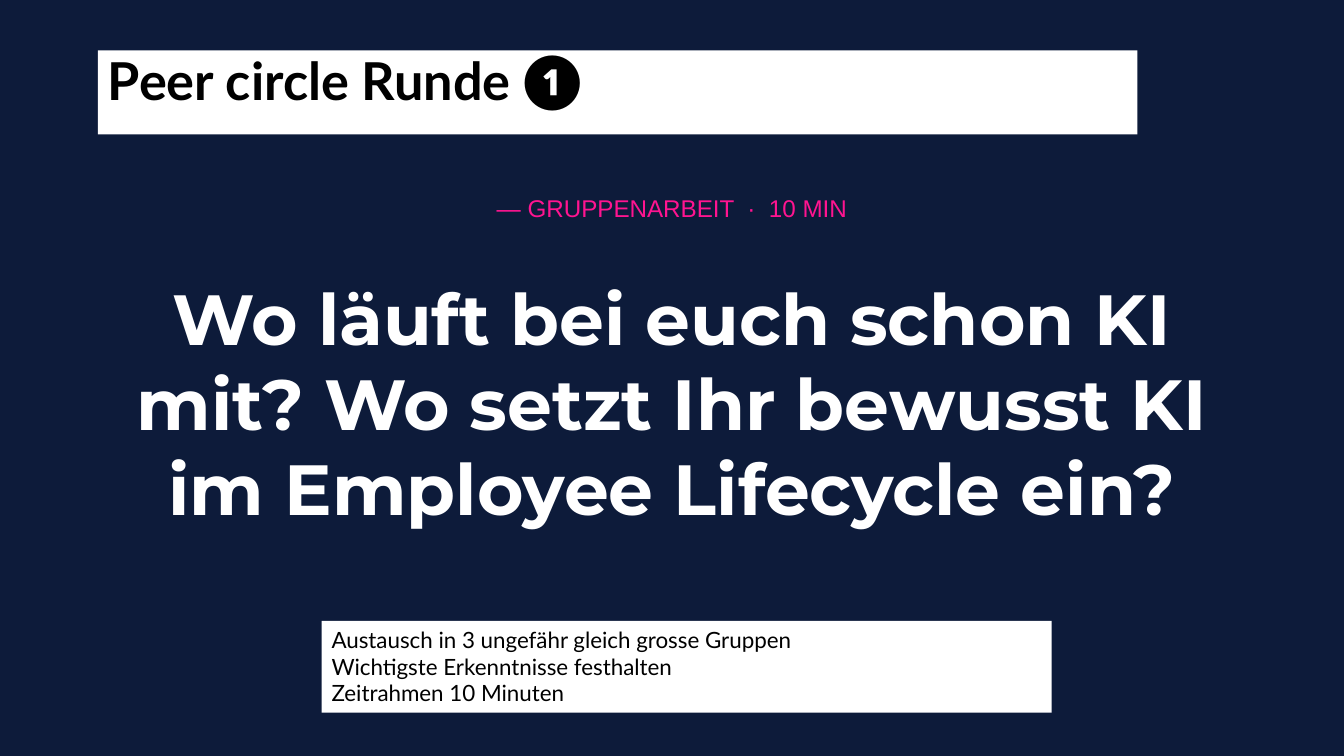
from dataclasses import dataclass
from typing import Optional

from pptx import Presentation
from pptx.dml.color import RGBColor
from pptx.enum.shapes import MSO_SHAPE
from pptx.enum.text import MSO_ANCHOR, MSO_AUTO_SIZE, PP_ALIGN
from pptx.util import Inches, Pt

RECT = MSO_SHAPE.RECTANGLE
TOP = MSO_ANCHOR.TOP
GROW = MSO_AUTO_SIZE.SHAPE_TO_FIT_TEXT
LEFT, CENTER = PP_ALIGN.LEFT, PP_ALIGN.CENTER
TITLE_ONLY = 5


@dataclass(frozen=True)
class Theme:
    navy: RGBColor = RGBColor(0x0D, 0x1B, 0x3A)
    pink: RGBColor = RGBColor(0xFF, 0x14, 0x90)
    white: RGBColor = RGBColor(0xFF, 0xFF, 0xFF)
    black: RGBColor = RGBColor(0x00, 0x00, 0x00)
    label_size: float = 17.3
    question_size: float = 50.7
    note_size: float = 16
    title_size: float = 37.3


THEME = Theme()


@dataclass(frozen=True)
class Block:
    text: str
    box: tuple[float, float, float, float]
    font: str
    size: float
    color: RGBColor
    bold: bool = False
    align: PP_ALIGN = LEFT
    fill: Optional[RGBColor] = None
    line_spacing: float = 1.0


TITLE = Block("Peer circle Runde ❶", (0.97, 0.5, 10.31, 0.67), "Lato",
              THEME.title_size, THEME.black, bold=True, fill=THEME.white,
              line_spacing=0.9)
BLOCKS = [
    Block("— GRUPPENARBEIT  ·  10 MIN", (0.93, 1.87, 11.47, 0.39), "Arial",
          THEME.label_size, THEME.pink, align=CENTER),
    Block("Wo läuft bei euch schon KI mit? Wo setzt Ihr bewusst KI "
          "im Employee Lifecycle ein?", (0.93, 2.67, 11.47, 2.66),
          "Montserrat", THEME.question_size, THEME.white, bold=True,
          align=CENTER),
    Block("Austausch in 3 ungefähr gleich grosse Gruppen\n"
          "Wichtigste Erkenntnisse festhalten\n"
          "Zeitrahmen 10 Minuten", (3.19, 6.16, 7.24, 0.91), "Lato",
          THEME.note_size, THEME.black, fill=THEME.white),
]


def format_block(sp, block: Block) -> None:
    """Place a shape and apply the block's fill and text style."""
    sp.left, sp.top, sp.width, sp.height = map(Inches, block.box)
    if block.fill is not None:
        sp.fill.solid()
        sp.fill.fore_color.rgb = block.fill
        sp.line.fill.background()
    tf = sp.text_frame
    tf.text = block.text
    tf.word_wrap = True
    tf.auto_size = GROW
    tf.vertical_anchor = TOP
    for p in tf.paragraphs:
        p.alignment = block.align
        p.line_spacing = block.line_spacing
        for r in p.runs:
            r.font.name = block.font
            r.font.size = Pt(block.size)
            r.font.bold = block.bold
            r.font.color.rgb = block.color


def add_block(slide, block: Block) -> None:
    """Add a filled rectangle, or a text box when there is no fill."""
    box = map(Inches, block.box)
    if block.fill is None:
        sp = slide.shapes.add_textbox(*box)
    else:
        sp = slide.shapes.add_shape(RECT, *box)
        sp.shadow.inherit = False
    format_block(sp, block)


def main() -> None:
    prs = Presentation()
    prs.slide_width, prs.slide_height = Inches(13.33), Inches(7.5)
    slide = prs.slides.add_slide(prs.slide_layouts[TITLE_ONLY])

    # Background
    slide.background.fill.solid()
    slide.background.fill.fore_color.rgb = THEME.navy

    # Title, label, question and instructions
    format_block(slide.shapes.title, TITLE)
    for block in BLOCKS:
        add_block(slide, block)

    prs.save("out.pptx")


if __name__ == "__main__":
    main()
